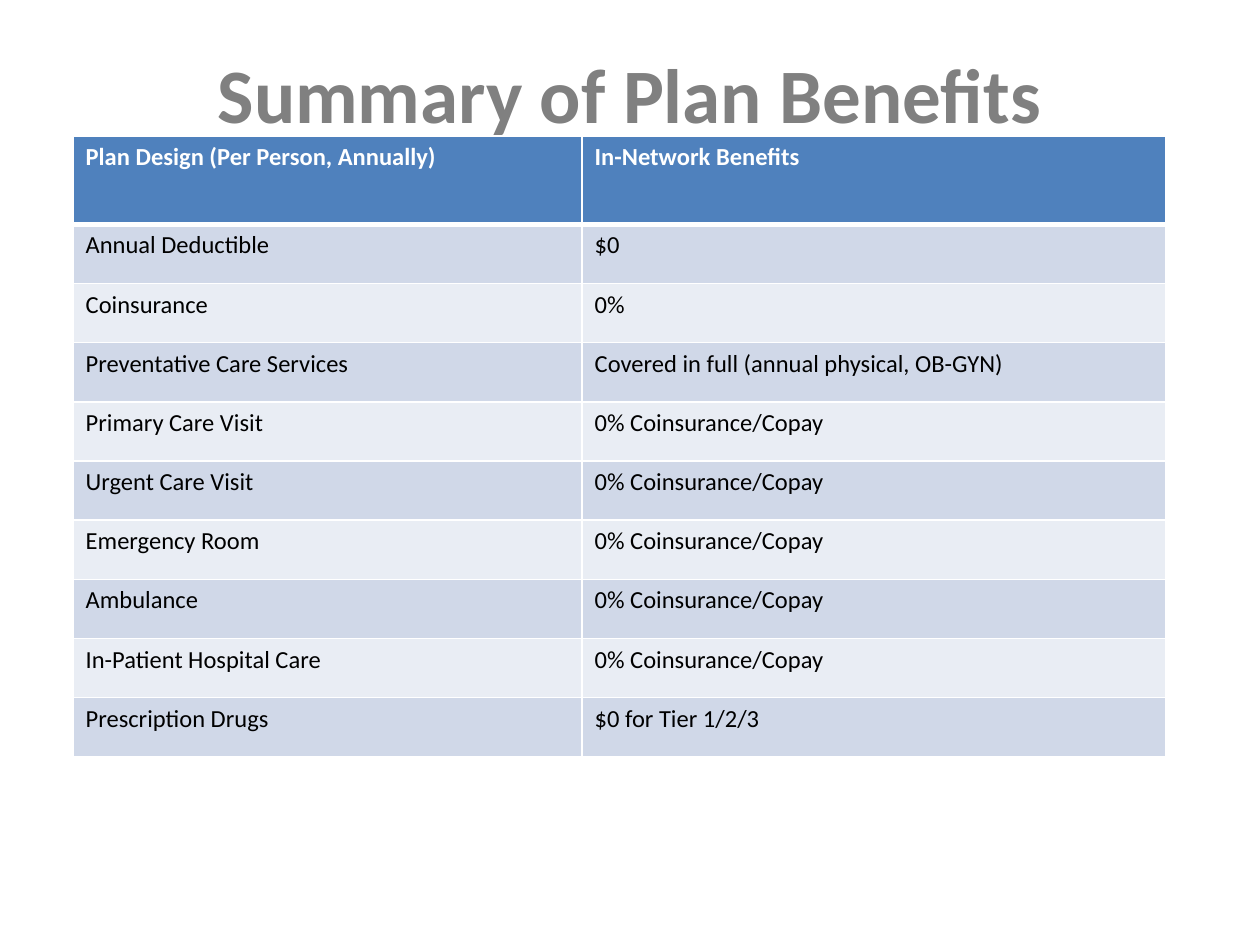
from lxml.etree import SubElement
from pptx import Presentation
from pptx.dml.color import RGBColor
from pptx.enum.text import MSO_ANCHOR, PP_ALIGN
from pptx.oxml.ns import qn
from pptx.util import Inches, Pt

FONT = "Calibri"
WHITE = RGBColor(0xFF, 0xFF, 0xFF)
BLACK = RGBColor(0x00, 0x00, 0x00)
GRAY = RGBColor(0x80, 0x80, 0x80)
BLUE = RGBColor(0x4F, 0x81, 0xBD)
BAND_DARK = RGBColor(0xD0, 0xD8, 0xE8)
BAND_LIGHT = RGBColor(0xE9, 0xED, 0xF4)

COPAY = "0% Coinsurance/Copay"
BENEFITS = [
    ("Plan Design (Per Person, Annually)", "In-Network Benefits"),
    ("Annual Deductible", "$0"),
    ("Coinsurance", "0%"),
    ("Preventative Care Services", "Covered in full (annual physical, OB-GYN)"),
    ("Primary Care Visit", COPAY),
    ("Urgent Care Visit", COPAY),
    ("Emergency Room", COPAY),
    ("Ambulance", COPAY),
    ("In-Patient Hospital Care", COPAY),
    ("Prescription Drugs", "$0 for Tier 1/2/3"),
]
COL_WIDTHS = (4.04, 4.63)
HEADER_HEIGHT = 0.7
ROW_HEIGHT = 0.47


def set_font(p, size, color, bold):
    p.font.name = FONT
    p.font.size = Pt(size)
    p.font.bold = bold
    p.font.color.rgb = color


def set_borders(cell, color, **widths):
    """Draw the cell's borders; widths maps L, R, T and B to points."""
    tcPr = cell._tc.get_or_add_tcPr()
    for i, (side, width) in enumerate(widths.items()):
        ln = tcPr.makeelement(qn(f"a:ln{side}"), {"w": str(Pt(width))})
        fill = SubElement(ln, qn("a:solidFill"))
        SubElement(fill, qn("a:srgbClr"), val=str(color))
        tcPr.insert(i, ln)


def add_title(slide, text):
    title = slide.shapes.title
    title.left, title.top = Inches(0.5), Inches(0)
    title.width, title.height = Inches(9), Inches(1.47)
    tf = title.text_frame
    tf.text = text
    tf.vertical_anchor = MSO_ANCHOR.MIDDLE
    p = tf.paragraphs[0]
    p.alignment = PP_ALIGN.CENTER
    set_font(p, 44, GRAY, True)


def format_cell(cell, text, row):
    header = row == 0
    cell.text = text
    set_font(cell.text_frame.paragraphs[0], 14, WHITE if header else BLACK, header)
    cell.fill.solid()
    band = BAND_DARK if row % 2 else BAND_LIGHT
    cell.fill.fore_color.rgb = BLUE if header else band
    set_borders(cell, WHITE, L=1, R=1, T=3 if row == 1 else 1, B=3 if header else 1)


def add_benefits_table(slide):
    heights = [HEADER_HEIGHT] + [ROW_HEIGHT] * (len(BENEFITS) - 1)
    table = slide.shapes.add_table(
        len(BENEFITS), len(COL_WIDTHS), Inches(0.58), Inches(1.08),
        Inches(sum(COL_WIDTHS)), Inches(sum(heights))).table
    for column, width in zip(table.columns, COL_WIDTHS):
        column.width = Inches(width)
    for i, (height, texts) in enumerate(zip(heights, BENEFITS)):
        table.rows[i].height = Inches(height)
        for j, text in enumerate(texts):
            format_cell(table.cell(i, j), text, i)


def main():
    prs = Presentation()
    prs.slide_width, prs.slide_height = Inches(10), Inches(7.5)
    slide = prs.slides.add_slide(prs.slide_layouts[5])
    add_title(slide, "Summary of Plan Benefits")
    add_benefits_table(slide)
    prs.save("out.pptx")


if __name__ == "__main__":
    main()
